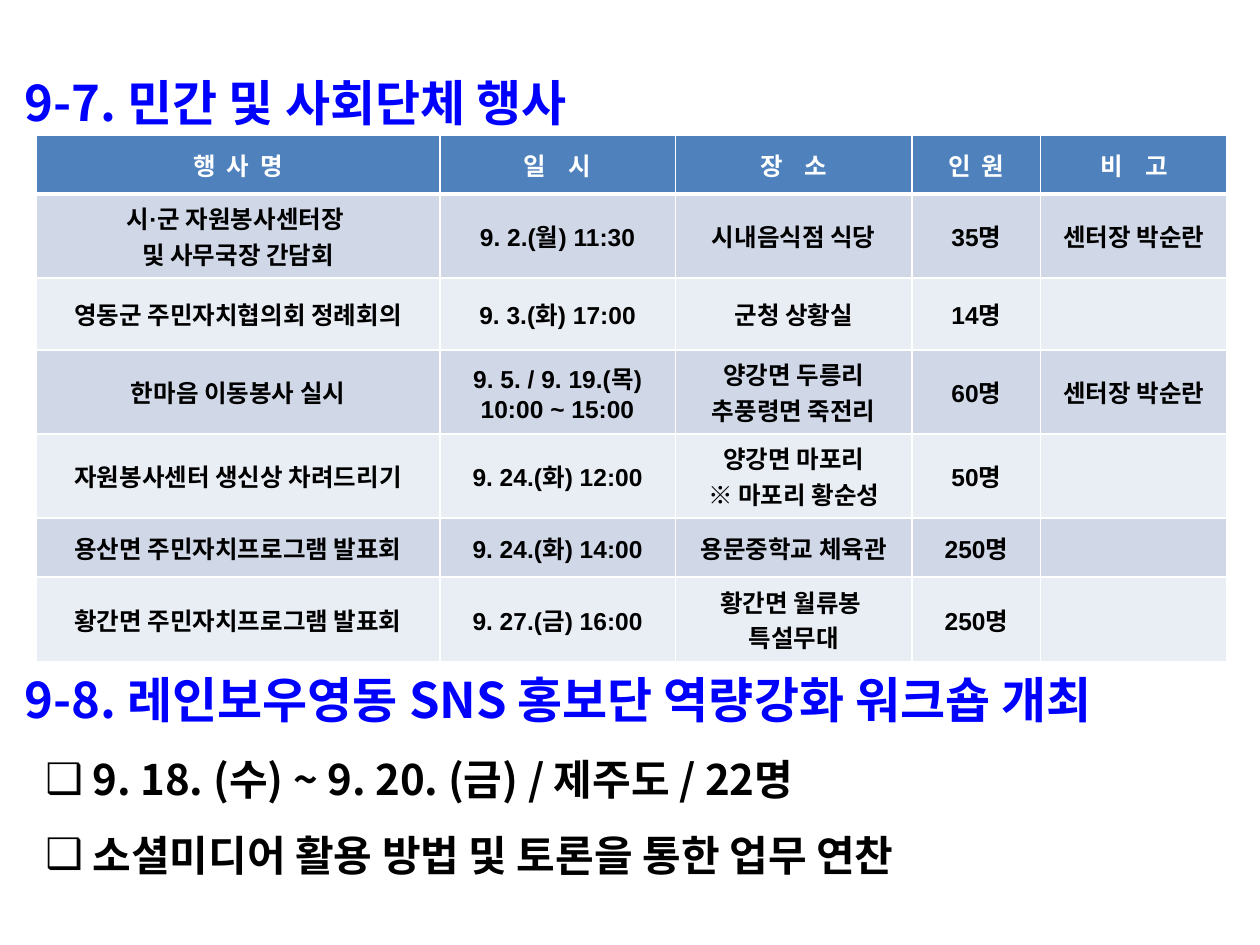
from dataclasses import dataclass

from lxml import etree
from pptx import Presentation
from pptx.dml.color import RGBColor
from pptx.enum import text
from pptx.oxml import ns
from pptx.util import Inches, Pt


@dataclass(frozen=True)
class Theme:
    """Colours, fonts and type sizes of the page."""
    heading: str = "0000FF"
    ink: str = "000000"
    white: str = "FFFFFF"
    header: str = "4F81BD"
    bands: tuple = ("D0D8E8", "E9EDF4")
    korean: str = "Noto Sans CJK KR"
    latin: str = "Arial"
    heading_size: int = 28
    list_size: int = 24
    table_size: int = 14


HEADING = " 9-7. 민간 및 사회단체 행사"
WORKSHOP = [
    " 9-8. 레인보우영동 SNS 홍보단 역량강화 워크숍 개최",
    " 9. 18. (수) ~ 9. 20. (금) / 제주도 / 22명",
    " 소셜미디어 활용 방법 및 토론을 통한 업무 연찬",
]
EVENTS = [
    ["행  사  명", "일    시", "장    소", "인  원", "비    고"],
    ["시·군 자원봉사센터장 \n및 사무국장 간담회", "9. 2.(월) 11:30", "시내음식점 식당", "35명", "센터장 박순란"],
    ["영동군 주민자치협의회 정례회의", "9. 3.(화) 17:00", "군청 상황실", "14명", ""],
    ["한마음 이동봉사 실시", "9. 5. / 9. 19.(목)\n10:00 ~ 15:00", "양강면 두릉리\n추풍령면 죽전리", "60명", "센터장 박순란"],
    ["자원봉사센터 생신상 차려드리기", "9. 24.(화) 12:00", "양강면 마포리\n※ 마포리 황순성", "50명", ""],
    ["용산면 주민자치프로그램 발표회", "9. 24.(화) 14:00", "용문중학교 체육관", "250명", ""],
    ["황간면 주민자치프로그램 발표회", "9. 27.(금) 16:00", "황간면 월류봉 \n특설무대", "250명", ""],
]
COLUMN_WIDTHS = [3.2, 1.87, 1.88, 1.02, 1.48]
ROW_HEIGHTS = [0.47, 0.57, 0.57, 0.57, 0.48, 0.47, 0.39]


class PageBuilder:
    """Holds the theme and the current page, and adds each kind of element."""

    def __init__(self, page, theme):
        self.page = page
        self.theme = theme

    def format_paragraph(self, para, size, colour, font):
        """Format every run of a paragraph."""
        for span in para.runs:
            span.font.size = Pt(size)
            span.font.bold = True
            span.font.name = font
            span.font.color.rgb = RGBColor.from_string(colour)
            east_asian = etree.SubElement(span.font._element, ns.qn("a:ea"))
            east_asian.set("typeface", self.theme.korean)

    def place(self, box, left, top, width, height):
        """Move a placeholder and anchor its text at the top."""
        box.left, box.top = Inches(left), Inches(top)
        box.width, box.height = Inches(width), Inches(height)
        frame = box.text_frame
        frame.word_wrap = True
        frame.auto_size = text.MSO_AUTO_SIZE.NONE
        frame.vertical_anchor = text.MSO_ANCHOR.TOP
        return frame

    def format_heading(self, para, spacing):
        """Format a paragraph as a section heading."""
        para.alignment = text.PP_ALIGN.LEFT
        para.line_spacing = spacing
        para.space_before = Pt(0)
        self.format_paragraph(para, self.theme.heading_size, self.theme.heading, self.theme.korean)

    def add_title(self, title, *bounds):
        """Fill the title placeholder."""
        frame = self.place(self.page.shapes.title, *bounds)
        frame.text = title
        self.format_heading(frame.paragraphs[0], 1.5)

    def add_section(self, lines, *bounds):
        """Fill the body placeholder with a heading and a bulleted list."""
        frame = self.place(self.page.placeholders[1], *bounds)
        frame.text = "\n".join(lines)
        heading, *items = frame.paragraphs
        self.format_heading(heading, 1.2)
        self.set_bullet(heading, None, 0, 0)
        for para in items:
            para.level = 1
            para.line_spacing = 1.5
            para.space_before = Pt(0)
            self.set_bullet(para, "❑", 0.5, -0.25)
            self.format_paragraph(para, self.theme.list_size, self.theme.ink, self.theme.korean)

    def set_bullet(self, para, symbol, margin, indent):
        """Set the indents of a paragraph and its bullet, if any."""
        properties = para._p.get_or_add_pPr()
        properties.set("marL", str(Inches(margin)))
        properties.set("indent", str(Inches(indent)))
        if symbol is None:
            etree.SubElement(properties, ns.qn("a:buNone"))
            return
        colour = etree.SubElement(properties, ns.qn("a:buClr"))
        etree.SubElement(colour, ns.qn("a:srgbClr")).set("val", self.theme.ink)
        etree.SubElement(properties, ns.qn("a:buChar")).set("char", symbol)

    def set_borders(self, cell, top, bottom):
        """Draw white borders around a cell."""
        properties = cell._tc.get_or_add_tcPr()
        for side, weight in (("L", 1), ("R", 1), ("T", top), ("B", bottom)):
            line = etree.SubElement(properties, ns.qn(f"a:ln{side}"))
            line.set("w", str(Pt(weight)))
            fill = etree.SubElement(line, ns.qn("a:solidFill"))
            etree.SubElement(fill, ns.qn("a:srgbClr")).set("val", self.theme.white)

    def add_table(self, rows, widths, heights, left, top):
        """Add a table with a header row and banded body rows."""
        box = self.page.shapes.add_table(
            len(rows), len(widths), Inches(left), Inches(top),
            Inches(sum(widths)), Inches(sum(heights)))
        table = box.table
        for column, width in zip(table.columns, widths):
            column.width = Inches(width)
        for index, (row, height, values) in enumerate(zip(table.rows, heights, rows)):
            row.height = Inches(height)
            is_header = index == 0
            fill = self.theme.header if is_header else self.theme.bands[(index - 1) % 2]
            colour = self.theme.white if is_header else self.theme.ink
            for cell, value in zip(row.cells, values):
                self.set_borders(cell, 3 if index == 1 else 1, 3 if is_header else 1)
                cell.fill.solid()
                cell.fill.fore_color.rgb = RGBColor.from_string(fill)
                cell.vertical_anchor = text.MSO_ANCHOR.MIDDLE
                cell.text_frame.text = value
                for para in cell.text_frame.paragraphs:
                    para.alignment = text.PP_ALIGN.CENTER
                    self.format_paragraph(para, self.theme.table_size, colour, self.theme.latin)


def main():
    """Build the events page."""
    deck = Presentation()
    deck.slide_width, deck.slide_height = Inches(10), Inches(7.5)
    builder = PageBuilder(deck.slides.add_slide(deck.slide_layouts[1]), Theme())
    builder.add_title(HEADING, 0.01, 0.29, 10, 3.91)
    builder.add_section(WORKSHOP, 0.01, 5.17, 9.99, 1.89)
    builder.add_table(EVENTS, COLUMN_WIDTHS, ROW_HEIGHTS, 0.29, 1.07)
    deck.save("out.pptx")


if __name__ == "__main__":
    main()
